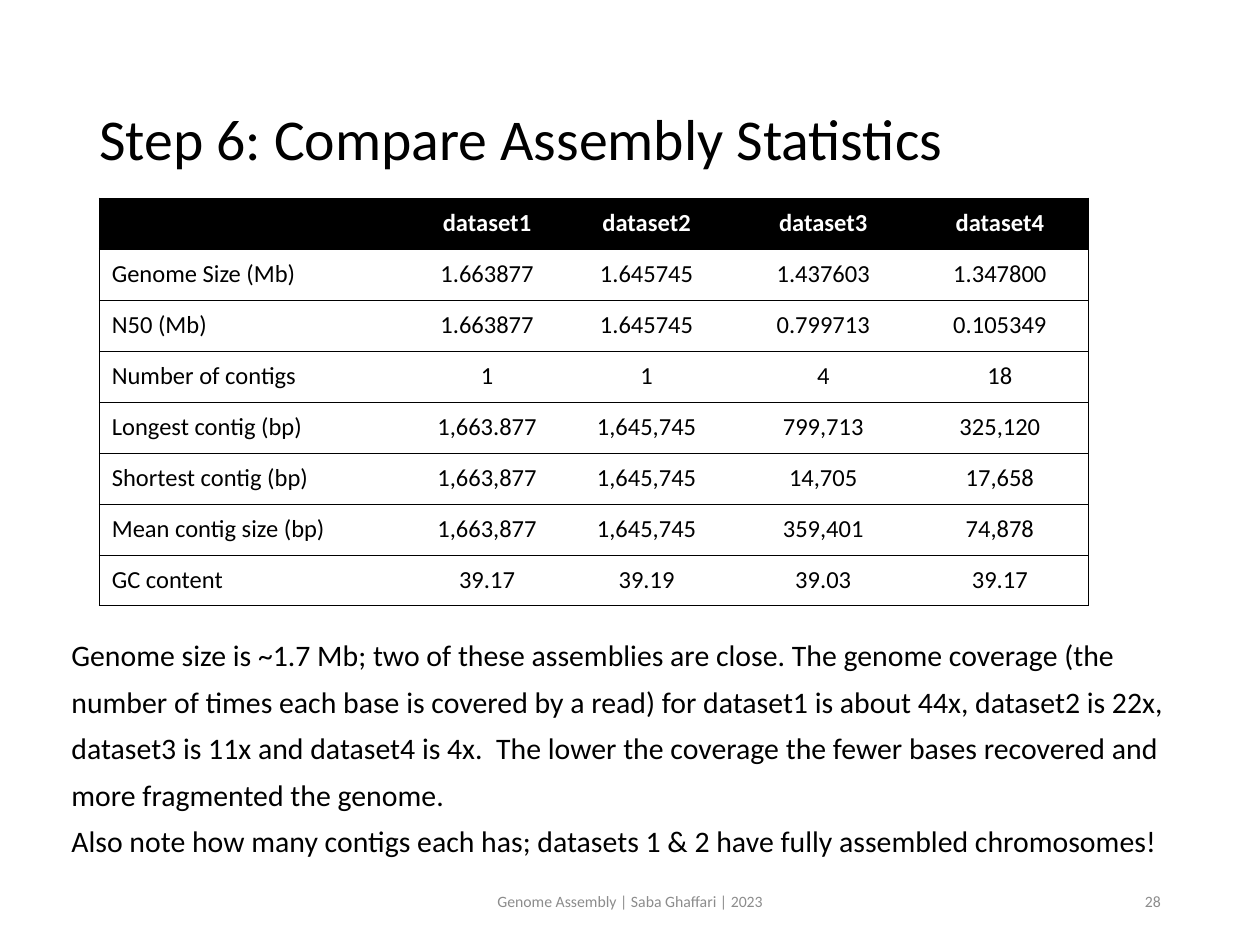
from lxml import etree
from pptx import Presentation
from pptx.dml.color import RGBColor
from pptx.enum.text import MSO_ANCHOR, PP_ALIGN
from pptx.oxml.ns import qn
from pptx.util import Cm, Pt

LEFT, CENTER, RIGHT = PP_ALIGN.LEFT, PP_ALIGN.CENTER, PP_ALIGN.RIGHT
TOP, MIDDLE = MSO_ANCHOR.TOP, MSO_ANCHOR.MIDDLE

FONT = "Calibri"
COLORS = {"ink": "000000", "paper": "FFFFFF", "footer": "8C8C8C"}

STATISTICS = [
    ["", "dataset1", "dataset2", "dataset3", "dataset4"],
    ["Genome Size (Mb)", "1.663877", "1.645745", "1.437603", "1.347800"],
    ["N50 (Mb)", "1.663877", "1.645745", "0.799713", "0.105349"],
    ["Number of contigs", "1", "1", "4", "18"],
    ["Longest contig (bp)", "1,663.877", "1,645,745", "799,713", "325,120"],
    ["Shortest contig (bp)", "1,663,877", "1,645,745", "14,705", "17,658"],
    ["Mean contig size (bp)", "1,663,877", "1,645,745", "359,401", "74,878"],
    ["GC content", "39.17", "39.19", "39.03", "39.17"],
]
COLUMN_SHARES = [6.38, 2.87, 3.56, 3.56, 3.56]

NOTES = [
    "Genome size is ~1.7 Mb; two of these assemblies are close. The genome coverage "
    "(the number of times each base is covered by a read) for dataset1 is about 44x, "
    "dataset2 is 22x, dataset3 is 11x and dataset4 is 4x.  The lower the coverage the "
    "fewer bases recovered and more fragmented the genome.",
    "Also note how many contigs each has; datasets 1 & 2 have fully assembled "
    "chromosomes!",
]


def style_paragraph(paragraph, size, color, align=LEFT, bold=False):
    paragraph.alignment = align
    paragraph.font.name = FONT
    paragraph.font.size = Pt(size)
    paragraph.font.bold = bold
    paragraph.font.color.rgb = RGBColor.from_string(COLORS[color])


def add_text(slide, box, lines, size, color="ink", align=LEFT, anchor=MIDDLE,
             spacing=1.0):
    frame = slide.shapes.add_textbox(*(Cm(length) for length in box)).text_frame
    frame.word_wrap = True
    frame.vertical_anchor = anchor
    frame.text = "\n".join(lines)
    for paragraph in frame.paragraphs:
        style_paragraph(paragraph, size, color, align)
        paragraph.line_spacing = spacing


def set_borders(cell, widths):
    """Draw the cell's edges; a width of 0 leaves that edge without a line."""
    properties = cell._tc.get_or_add_tcPr()
    for side in "LRTB":
        width = widths[side]
        edge = etree.SubElement(properties, qn(f"a:ln{side}"), w=str(Pt(width)))
        if width:
            fill = etree.SubElement(edge, qn("a:solidFill"))
            etree.SubElement(fill, qn("a:srgbClr"), val=COLORS["ink"])
        else:
            etree.SubElement(edge, qn("a:noFill"))


def add_statistics(slide, box):
    left, top, width, height = box
    row_count, column_count = len(STATISTICS), len(COLUMN_SHARES)
    table = slide.shapes.add_table(
        row_count, column_count, Cm(left), Cm(top), Cm(width), Cm(height)).table
    table.horz_banding = False
    for column, share in zip(table.columns, COLUMN_SHARES):
        column.width = Cm(width * share / sum(COLUMN_SHARES))
    for row in table.rows:
        row.height = Cm(height / row_count)

    for r, values in enumerate(STATISTICS):
        is_header = r == 0
        for c, value in enumerate(values):
            cell = table.cell(r, c)
            cell.text = value
            cell.vertical_anchor = MIDDLE
            style_paragraph(cell.text_frame.paragraphs[0], 14,
                            "paper" if is_header else "ink",
                            CENTER if c else LEFT, is_header)
            # Frame and row rules only: no lines between columns
            set_borders(cell, {
                "L": 0.5 if c == 0 else 0,
                "R": 0.5 if c == column_count - 1 else 0,
                "T": 1 if r == 1 else 0.5,
                "B": 1 if is_header else 0.5,
            })
            if is_header:
                cell.fill.solid()
                cell.fill.fore_color.rgb = RGBColor.from_string(COLORS["ink"])
            else:
                cell.fill.background()


def add_footer(slide, box):
    left, top, width, height = box
    credit_width, number_width = 8.58, 5.72
    add_text(slide, (left + (width - credit_width) / 2, top, credit_width, height),
             ["Genome Assembly | Saba Ghaffari | 2023"], 9, "footer", CENTER)
    add_text(slide, (left + width - number_width, top, number_width, height),
             ["28"], 9, "footer", RIGHT)


def main():
    presentation = Presentation()
    presentation.slide_width, presentation.slide_height = Cm(25.4), Cm(19.05)
    slide = presentation.slides.add_slide(presentation.slide_layouts[6])

    # Explanation, title, footer and table
    add_text(slide, (1.19, 12.5, 23.04, 4.9), NOTES, 17, anchor=TOP, spacing=1.3)
    add_text(slide, (1.75, 1.02, 21.9, 3.68),
             ["Step 6: Compare Assembly Statistics"], 33, spacing=0.9)
    add_footer(slide, (1.75, 17.66, 21.9, 1.01))
    add_statistics(slide, (2, 3.99, 19.94, 8.23))

    presentation.save("out.pptx")


if __name__ == "__main__":
    main()
